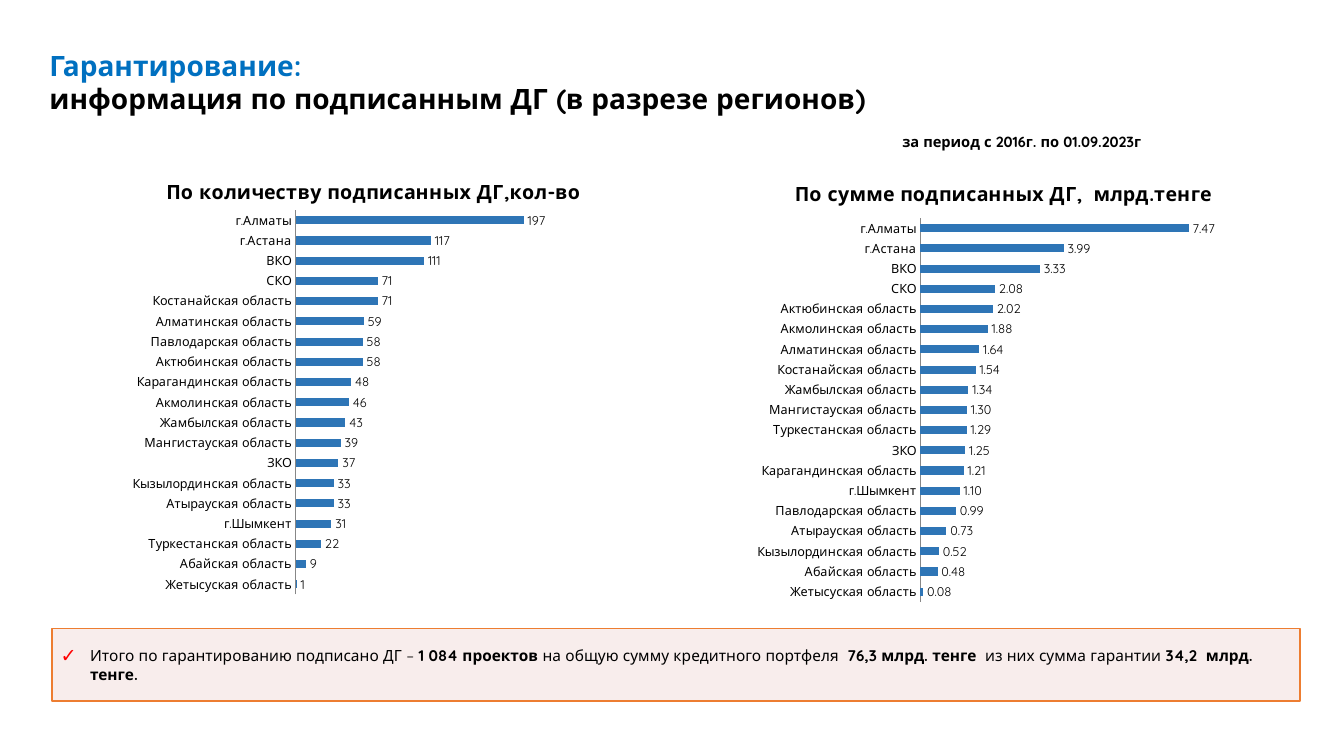
from pptx import Presentation
from pptx.chart.data import CategoryChartData as Data
from pptx.dml.color import RGBColor as Rgb
from pptx.enum.chart import XL_CHART_TYPE as Kind, XL_LABEL_POSITION as Spot
from pptx.enum.chart import XL_TICK_MARK as Tick
from pptx.enum.shapes import MSO_SHAPE as Form
from pptx.enum.text import MSO_ANCHOR as Anchor, PP_ALIGN as Align
from pptx.oxml import parse_xml
from pptx.oxml.ns import nsdecls, qn
from pptx.util import Cm, Pt

BLACK = Rgb(0, 0, 0)
BLUE = Rgb(0x00, 0x70, 0xC0)
BAR = Rgb(0x2E, 0x75, 0xB6)
GREY = Rgb(0x87, 0x87, 0x87)
PINK = Rgb(0xF2, 0xDC, 0xDB)
ORANGE = Rgb(0xED, 0x7D, 0x31)
RED = Rgb(0xFF, 0, 0)
FACE = "Quicksand"

HEAD = [("Гарантирование:", BLUE),
        ("информация по подписанным ДГ (в разрезе регионов)", BLACK)]
PERIOD = "за период с 2016г. по 01.09.2023г"
TOTAL = [("Итого по гарантированию подписано ДГ – ", False),
         ("1 084 проектов ", True),
         ("на общую сумму кредитного портфеля  ", False),
         ("76,3 млрд. тенге  ", True),
         ("из них сумма гарантии", False),
         (" 34,2  млрд. тенге.", True)]
COUNTS = {
    "Жетысуская область": 1, "Абайская область": 9,
    "Туркестанская область": 22, "г.Шымкент": 31,
    "Атырауская область": 33, "Кызылординская область": 33,
    "ЗКО": 37, "Мангистауская область": 39,
    "Жамбылская область": 43, "Акмолинская область": 46,
    "Карагандинская область": 48, "Актюбинская область": 58,
    "Павлодарская область": 58, "Алматинская область": 59,
    "Костанайская область": 71, "СКО": 71, "ВКО": 111,
    "г.Астана": 117, "г.Алматы": 197}
SUMS = {
    "Жетысуская область": 0.08, "Абайская область": 0.48,
    "Кызылординская область": 0.52, "Атырауская область": 0.73,
    "Павлодарская область": 0.99, "г.Шымкент": 1.1,
    "Карагандинская область": 1.21, "ЗКО": 1.25,
    "Туркестанская область": 1.29, "Мангистауская область": 1.3,
    "Жамбылская область": 1.34, "Костанайская область": 1.54,
    "Алматинская область": 1.64, "Акмолинская область": 1.88,
    "Актюбинская область": 2.02, "СКО": 2.08, "ВКО": 3.33,
    "г.Астана": 3.99, "г.Алматы": 7.47}
CHARTS = [
    dict(title="По количеству подписанных ДГ,кол-во ", data=COUNTS,
         box=(1.82, 4.03, 15.21, 11.53), top=250, form="General",
         plot=(0.37, 0.11, 0.48, 0.84), label=(0.15, 0.03)),
    dict(title="По сумме подписанных ДГ,  млрд.тенге", data=SUMS,
         box=(17.28, 4.32, 14.78, 11.79), top=8, form="#,##0.00",
         plot=(0.4, 0.1, 0.49, 0.82), label=(0.18, 0.01))]


def style(font, size, bold=None, color=BLACK):
    """Set the common look of a font."""
    font.name, font.size, font.bold = FACE, Pt(size), bold
    font.color.rgb = color


def place(node, spots, inner=False):
    """Give a chart part a manual layout."""
    old = node.find(qn("c:layout"))
    if old is not None:
        node.remove(old)
    tags = '<c:layoutTarget val="inner"/>' if inner else ""
    tags += '<c:xMode val="edge"/><c:yMode val="edge"/>'
    tags += "".join(f'<c:{k} val="{v}"/>' for k, v in zip("xywh", spots))
    layout = parse_xml(f'<c:layout {nsdecls("c")}><c:manualLayout>{tags}'
                       '</c:manualLayout></c:layout>')
    text = node.find(qn("c:tx"))
    if text is None:
        node.insert(0, layout)
    else:
        text.addnext(layout)


def add_bars(slide, item):
    """Add one bar chart by region."""
    data = Data()
    data.categories = list(item["data"])
    data.add_series("Series 1", list(item["data"].values()))
    chart = slide.shapes.add_chart(
        Kind.BAR_CLUSTERED, *map(Cm, item["box"]), data).chart
    style(chart.font, 9)
    chart.has_legend = False
    chart.has_title = True
    title = chart.chart_title
    title.include_in_layout = False
    title.text_frame.text = item["title"]
    style(title.text_frame.paragraphs[0].font, 14, True)
    area = chart.plots[0]
    area.gap_width, area.vary_by_categories = 150, False
    fill = area.series[0].format.fill
    fill.solid()
    fill.fore_color.rgb = BAR
    area.has_data_labels = True
    marks = area.data_labels
    marks.show_value, marks.position = True, Spot.OUTSIDE_END
    marks.number_format, marks.number_format_is_linked = item["form"], False
    style(marks.font, 9)
    names, scale = chart.category_axis, chart.value_axis
    names.major_tick_mark = names.minor_tick_mark = Tick.NONE
    names.format.line.color.rgb = GREY
    style(names.tick_labels.font, 9)
    scale.minimum_scale, scale.maximum_scale = 0, item["top"]
    scale.has_major_gridlines = scale.visible = False
    tree = chart.element.find(qn("c:chart"))
    place(tree.find(qn("c:title")), item["label"])
    place(tree.find(qn("c:plotArea")), item["plot"], True)


def add_head(slide):
    """Fill the title and add the period."""
    title = slide.shapes.title
    title.left, title.top, title.width, title.height = map(
        Cm, (0.99, 1.09, 21.79, 1.96))
    frame = title.text_frame
    frame.vertical_anchor, frame.word_wrap = Anchor.TOP, True
    line = frame.paragraphs[0]
    line.alignment, line.line_spacing = Align.LEFT, 1.0
    for i, (words, color) in enumerate(HEAD):
        if i:
            line.add_line_break()
        run = line.add_run()
        run.text = words
        style(run.font, 20, True, color)
    box = slide.shapes.add_textbox(*map(Cm, (22.49, 3.22, 6.71, 0.71)))
    box.text_frame.text = PERIOD
    style(box.text_frame.paragraphs[0].font, 10.5, True)


def add_check(line):
    """Give a paragraph a red check mark bullet."""
    props = line._p.get_or_add_pPr()
    props.set("marL", str(Cm(0.76)))
    props.set("indent", str(-Cm(0.74)))
    space = nsdecls("a")
    for tag in (f'<a:buClr {space}><a:srgbClr val="{RED}"/></a:buClr>',
                f'<a:buSzPct {space} val="125000"/>',
                f'<a:buFont {space} typeface="{FACE}"/>',
                f'<a:buChar {space} char="✓"/>'):
        props.append(parse_xml(tag))


def add_total(slide):
    """Add the framed summary."""
    box = slide.shapes.add_shape(
        Form.RECTANGLE, *map(Cm, (1.31, 15.84, 31.45, 1.83)))
    box.shadow.inherit = False
    box.fill.solid()
    box.fill.fore_color.rgb = PINK
    tint = box.fill._xPr.find(".//" + qn("a:srgbClr"))
    tint.append(parse_xml(f'<a:alpha {nsdecls("a")} val="50000"/>'))
    box.line.color.rgb, box.line.width = ORANGE, Pt(1.25)
    frame = box.text_frame
    frame.word_wrap, frame.vertical_anchor = True, Anchor.MIDDLE
    frame.margin_left = frame.margin_right = Cm(0.2)
    frame.margin_top = frame.margin_bottom = Cm(0.1)
    line = frame.paragraphs[0]
    line.alignment, line.space_after = Align.LEFT, Pt(6)
    add_check(line)
    style(line.font, 11)
    for words, bold in TOTAL:
        run = line.add_run()
        run.text, run.font.bold = words, bold


def main():
    """Build the slide."""
    deck = Presentation()
    deck.slide_width, deck.slide_height = Cm(33.87), Cm(19.05)
    slide = deck.slides.add_slide(deck.slide_layouts[5])
    add_head(slide)
    add_total(slide)
    for item in CHARTS:
        add_bars(slide, item)
    deck.save("out.pptx")


if __name__ == "__main__":
    main()
